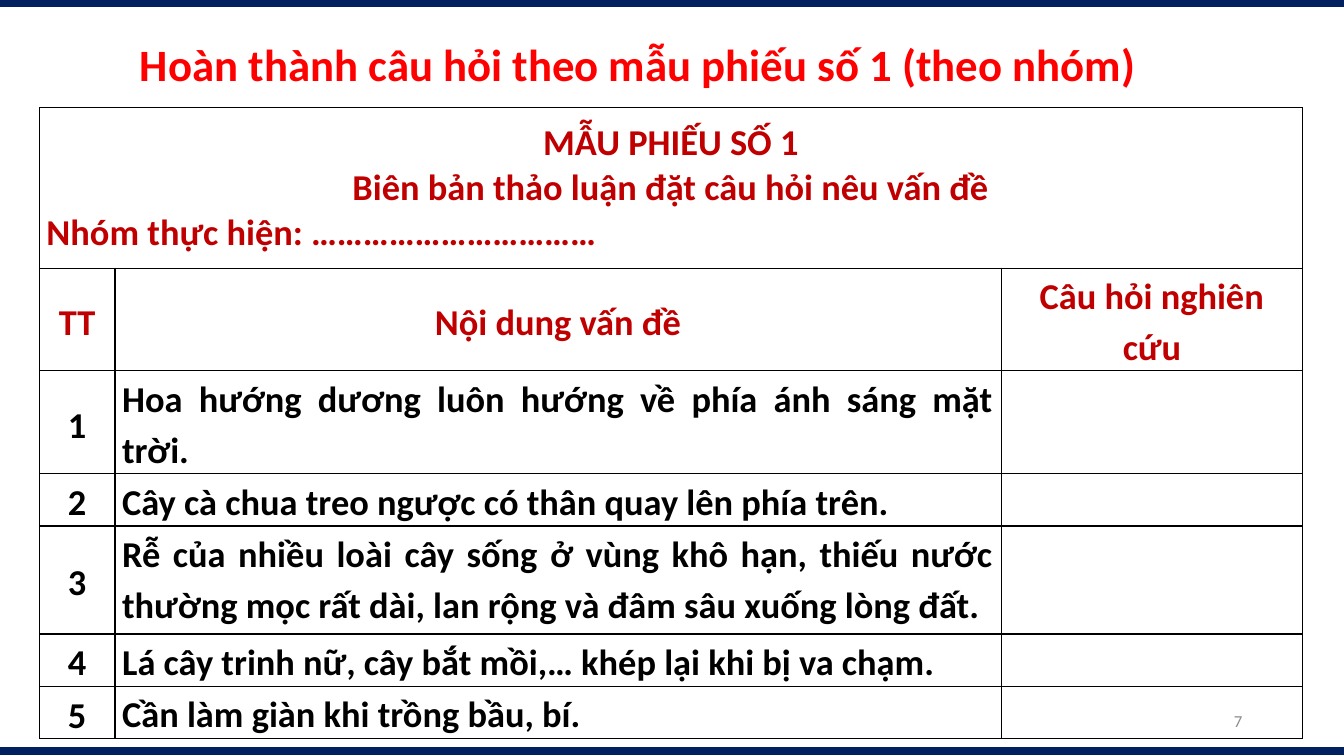
from dataclasses import dataclass

from lxml import etree
from pptx import Presentation
from pptx import util as u
from pptx.dml.color import RGBColor
from pptx.enum import shapes, text
from pptx.oxml import ns

WIDTH, HEIGHT = u.Inches(13.33), u.Inches(7.5)
NAVY, RED, CRIMSON, BLACK, GREY, WHITE = (
    "002060", "FF0000", "C00000", "000000", "8C8C8C", "FFFFFF")
LEFT, CENTER, RIGHT, JUSTIFY = (
    text.PP_ALIGN.LEFT, text.PP_ALIGN.CENTER, text.PP_ALIGN.RIGHT, text.PP_ALIGN.JUSTIFY)
MIDDLE, TOP = text.MSO_ANCHOR.MIDDLE, text.MSO_ANCHOR.TOP


@dataclass
class Line:
    words: str
    size: int = 26
    color: str = CRIMSON
    bold: bool = True
    align: text.PP_ALIGN = CENTER
    spacing: float = 1.0
    before: int = 0


@dataclass
class Box:
    """Left, top, width and height as percentages of the slide."""
    left: float
    top: float
    width: float
    height: float


def across(percent: float) -> int:
    return round(WIDTH * percent / 100)


def down(percent: float) -> int:
    return round(HEIGHT * percent / 100)


def rgb(color: str) -> RGBColor:
    return RGBColor.from_string(color)


def place(box: Box) -> tuple[int, int, int, int]:
    return across(box.left), down(box.top), across(box.width), down(box.height)


def write(frame, lines: list[Line]) -> None:
    frame.word_wrap = True
    for index, line in enumerate(lines):
        paragraph = frame.add_paragraph() if index else frame.paragraphs[0]
        paragraph.alignment = line.align
        paragraph.line_spacing = line.spacing
        paragraph.space_before = u.Pt(line.before)
        run = paragraph.add_run()
        run.text = line.words
        run.font.name = "Calibri"
        run.font.size = u.Pt(line.size)
        run.font.bold = line.bold
        run.font.color.rgb = rgb(line.color)


def add_label(slide, box: Box, line: Line) -> None:
    frame = slide.shapes.add_textbox(*place(box)).text_frame
    frame.vertical_anchor = MIDDLE
    write(frame, [line])


def add_bar(slide, top: float) -> None:
    bar = slide.shapes.add_connector(
        shapes.MSO_CONNECTOR.STRAIGHT, 0, down(top), WIDTH, down(top))
    bar.line.color.rgb = rgb(NAVY)
    bar.line.width = u.Pt(6)
    etree.SubElement(bar._element.spPr, ns.qn("a:effectLst"))


def style_cell(cell) -> None:
    cell.fill.solid()
    cell.fill.fore_color.rgb = rgb(WHITE)
    properties = cell._tc.get_or_add_tcPr()
    # Borders come before the fill
    for index, side in enumerate(("lnL", "lnR", "lnT", "lnB")):
        border = etree.Element(ns.qn(f"a:{side}"), w=str(u.Pt(1)))
        fill = etree.SubElement(border, ns.qn("a:solidFill"))
        etree.SubElement(fill, ns.qn("a:srgbClr"), val=BLACK)
        properties.insert(index, border)


def fill_cell(cell, lines: list[Line], anchor: text.MSO_ANCHOR = MIDDLE) -> None:
    cell.margin_left = cell.margin_right = across(0.53)
    cell.margin_top = cell.margin_bottom = 0
    cell.vertical_anchor = anchor
    write(cell.text_frame, lines)


def entry(words: str, color: str = BLACK, align: text.PP_ALIGN = CENTER) -> Line:
    return Line(words, color=color, align=align, spacing=1.15, before=5)


# Content of the worksheet
COLUMN_SHARES = [5.63, 65.94, 22.43]
ROW_SHARES = [21.2, 13.6, 13.6, 6.93, 14.27, 6.93, 6.93]
FORM_HEADING = [
    Line("MẪU PHIẾU SỐ 1"),
    Line("Biên bản thảo luận đặt câu hỏi nêu vấn đề"),
    Line("Nhóm thực hiện: ……………………………", align=JUSTIFY),
]
COLUMN_TITLES = ["TT", "Nội dung vấn đề", "Câu hỏi nghiên cứu"]
PROBLEMS = [
    "Hoa hướng dương luôn hướng về phía ánh sáng mặt trời.",
    "Cây cà chua treo ngược có thân quay lên phía trên.",
    "Rễ của nhiều loài cây sống ở vùng khô hạn, thiếu nước thường mọc rất dài, "
    "lan rộng và đâm sâu xuống lòng đất.",
    "Lá cây trinh nữ, cây bắt mồi,… khép lại khi bị va chạm.",
    "Cần làm giàn khi trồng bầu, bí.",
]


def add_worksheet(slide) -> None:
    box = Box(2.93, 14.27, sum(COLUMN_SHARES), sum(ROW_SHARES))
    worksheet = slide.shapes.add_table(
        len(ROW_SHARES), len(COLUMN_SHARES), *place(box)).table
    worksheet.first_row = worksheet.horz_banding = False
    for column, share in zip(worksheet.columns, COLUMN_SHARES):
        column.width = across(share)
    for row, share in zip(worksheet.rows, ROW_SHARES):
        row.height = down(share)
    for cell in worksheet.iter_cells():
        style_cell(cell)

    # Heading across all columns, then the column titles
    worksheet.cell(0, 0).merge(worksheet.cell(0, 2))
    fill_cell(worksheet.cell(0, 0), FORM_HEADING)
    for column, title in enumerate(COLUMN_TITLES):
        fill_cell(worksheet.cell(1, column), [entry(title, CRIMSON)])

    # Numbered problems
    for number, problem in enumerate(PROBLEMS, start=1):
        fill_cell(worksheet.cell(number + 1, 0), [entry(str(number))])
        fill_cell(worksheet.cell(number + 1, 1), [entry(problem, align=JUSTIFY)], TOP)


def main() -> None:
    deck = Presentation()
    deck.slide_width, deck.slide_height = WIDTH, HEIGHT
    slide = deck.slides.add_slide(deck.slide_layouts[6])

    # Bars at the bottom and top edges
    for top in (99.33, 0.4):
        add_bar(slide, top)

    # Title, worksheet and page number
    add_label(slide, Box(9.68, 1.87, 82.52, 13.87),
              Line("Hoàn thành câu hỏi theo mẫu phiếu số 1 (theo nhóm)",
                   size=32, color=RED, align=LEFT, spacing=0.9))
    add_worksheet(slide)
    add_label(slide, Box(70.67, 92.67, 22.5, 5.33),
              Line("7", size=12, color=GREY, bold=False, align=RIGHT))

    deck.save("out.pptx")


if __name__ == "__main__":
    main()
